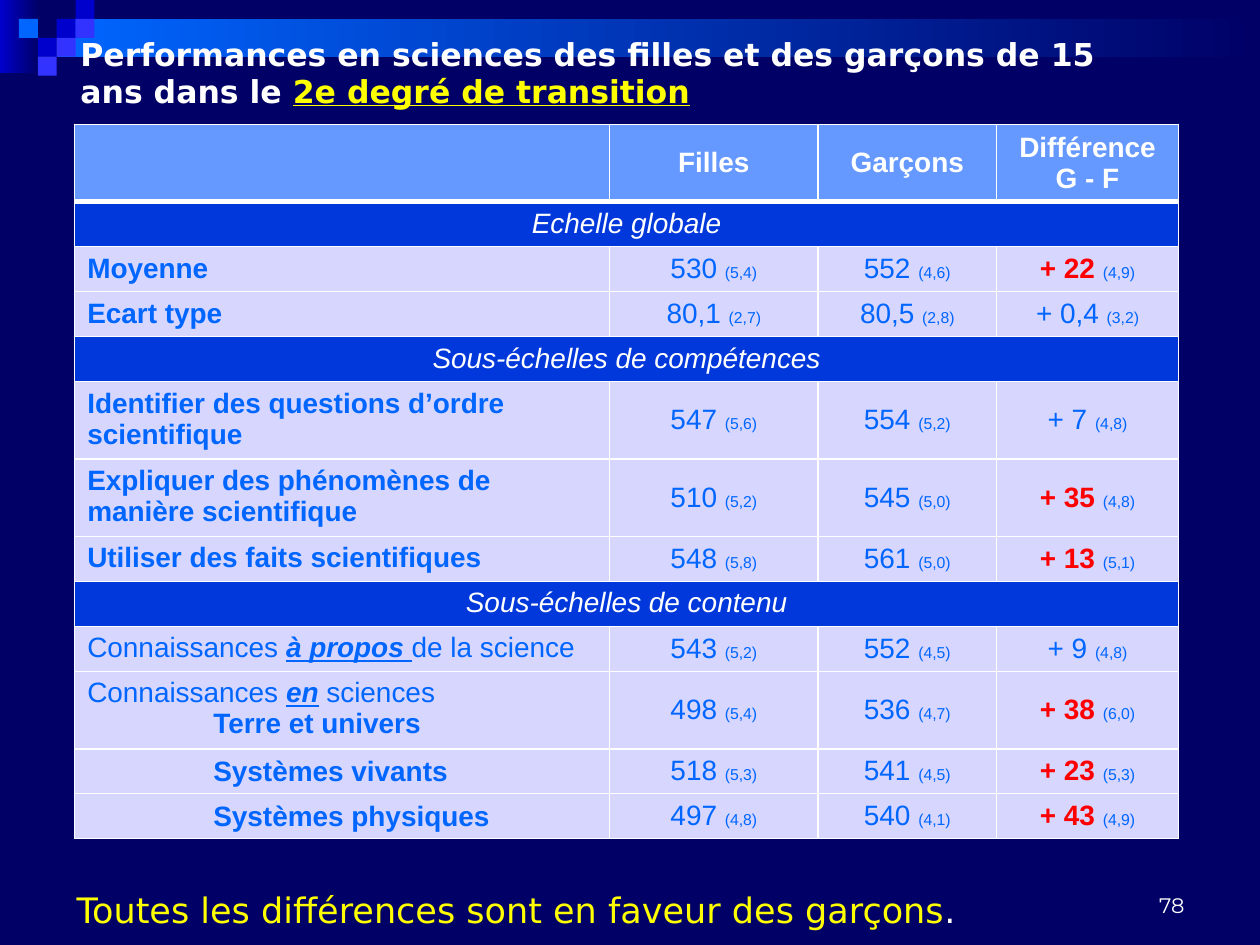
import pptx
import pptx.dml.color
import pptx.enum.shapes
import pptx.enum.text
import pptx.oxml
import pptx.oxml.ns
import pptx.util

Pt = pptx.util.Pt
RGBColor = pptx.dml.color.RGBColor
Align = pptx.enum.text.PP_ALIGN
Anchor = pptx.enum.text.MSO_ANCHOR

NAVY = RGBColor(0x00, 0x00, 0x66)
DARK_BLUE = RGBColor(0x00, 0x00, 0xCC)
VIOLET = RGBColor(0x33, 0x33, 0xFF)
BLUE = RGBColor(0x00, 0x66, 0xFF)
HEADER_BLUE = RGBColor(0x66, 0x99, 0xFF)
SECTION_BLUE = RGBColor(0x00, 0x38, 0xDC)
LILAC = RGBColor(0xD6, 0xD6, 0xFF)
WHITE = RGBColor(0xFF, 0xFF, 0xFF)
YELLOW = RGBColor(0xFF, 0xFF, 0x00)
RED = RGBColor(0xFF, 0x00, 0x00)

TITLE = {"name": "DejaVu Sans", "size": Pt(18), "bold": True, "color": WHITE}
REMARK = {"name": "DejaVu Sans", "size": Pt(20), "color": YELLOW}
NUMBER = {"name": "Montserrat", "size": Pt(12), "color": WHITE}
BODY = {"name": "Arial", "size": Pt(16), "bold": False, "color": BLUE}
LABEL = {**BODY, "bold": True}
HEADER = {**LABEL, "color": WHITE}
SECTION = {**BODY, "italic": True, "color": WHITE}
STRESS = {**LABEL, "italic": True, "underline": True}
UNDERLINED = {**BODY, "underline": True}
SIGNIFICANT = {**LABEL, "color": RED}
ERROR = {**BODY, "size": Pt(9)}

COLUMNS = [305.7, 119.1, 102, 104]
SINGLE, DOUBLE = 25.7, 44.3
INDENT = 72
SQUARE = 10.8
SQUARES = [(3, 1, DARK_BLUE), (4, 0, DARK_BLUE), (4, 1, VIOLET), (2, 2, DARK_BLUE),
           (1, 1, BLUE), (3, 2, VIOLET), (2, 3, VIOLET)]

HEADINGS = ["Filles", "Garçons", "Différence G - F"]
ROWS = [
    (SINGLE, "Echelle globale", []),
    (SINGLE, "Moyenne", ["530 (5,4)", "552 (4,6)", "+ 22 (4,9)"]),
    (SINGLE, "Ecart type", ["80,1 (2,7)", "80,5 (2,8)", "+ 0,4 (3,2)"]),
    (SINGLE, "Sous-échelles de compétences", []),
    (DOUBLE, "Identifier des questions d’ordre scientifique",
     ["547 (5,6)", "554 (5,2)", "+ 7 (4,8)"]),
    (DOUBLE, "Expliquer des phénomènes de manière scientifique",
     ["510 (5,2)", "545 (5,0)", "+ 35 (4,8)"]),
    (SINGLE, "Utiliser des faits scientifiques", ["548 (5,8)", "561 (5,0)", "+ 13 (5,1)"]),
    (SINGLE, "Sous-échelles de contenu", []),
    (SINGLE, [(0, [("Connaissances ", BODY), ("à propos", STRESS), (" ", UNDERLINED),
                   ("de la science", BODY)])],
     ["543 (5,2)", "552 (4,5)", "+ 9 (4,8)"]),
    (DOUBLE, [(0, [("Connaissances ", BODY), ("en", STRESS), (" sciences", BODY)]),
              (INDENT, [("Terre et univers", LABEL)])],
     ["498 (5,4)", "536 (4,7)", "+ 38 (6,0)"]),
    (SINGLE, [(INDENT, [("Systèmes vivants", LABEL)])],
     ["518 (5,3)", "541 (4,5)", "+ 23 (5,3)"]),
    (SINGLE, [(INDENT, [("Systèmes physiques", LABEL)])],
     ["497 (4,8)", "540 (4,1)", "+ 43 (4,9)"]),
]


def plain(text, style):
    return [(0, [(text, style)])]


def decimal(text):
    return float(text.strip("+ ()").replace(",", "."))


def measure(text):
    value, _, error = text.rpartition(" ")
    significant = value.startswith("+") and decimal(value) > 1.96 * decimal(error)
    return [(0, [(value + " ", SIGNIFICANT if significant else BODY), (error, ERROR)])]


class SlideBuilder:
    def __init__(self, page, border_color):
        self.page = page
        self.border_color = border_color

    def fill_text(self, frame, paragraphs, align=Align.LEFT):
        for index, (indent, spans) in enumerate(paragraphs):
            para = frame.add_paragraph() if index else frame.paragraphs[0]
            para.alignment = align
            if indent:
                para._p.get_or_add_pPr().set("marL", str(Pt(indent)))
            for text, style in spans:
                span = para.add_run()
                span.text = text
                for key, value in style.items():
                    if key == "color":
                        span.font.color.rgb = value
                    else:
                        setattr(span.font, key, value)

    def block(self, left, top, width, height, *colors):
        box = self.page.shapes.add_shape(pptx.enum.shapes.MSO_SHAPE.RECTANGLE,
                                         Pt(left), Pt(top), Pt(width), Pt(height))
        box.shadow.inherit = False
        box.line.fill.background()
        if len(colors) == 1:
            box.fill.solid()
            box.fill.fore_color.rgb = colors[0]
            return
        box.fill.gradient()
        box.fill.gradient_angle = 0
        for stop, color in zip(box.fill.gradient_stops, colors):
            stop.color.rgb = color

    def text(self, left, top, width, height, spans, align=Align.LEFT, **layout):
        box = self.page.shapes.add_textbox(Pt(left), Pt(top), Pt(width), Pt(height))
        for key, value in {"word_wrap": True, **layout}.items():
            setattr(box.text_frame, key, value)
        self.fill_text(box.text_frame, [(0, spans)], align)

    def table(self, left, top, widths, heights):
        table = self.page.shapes.add_table(len(heights), len(widths), Pt(left), Pt(top),
                                           Pt(sum(widths)), Pt(sum(heights))).table
        table.first_row = table.horz_banding = False
        for column, width in zip(table.columns, widths):
            column.width = Pt(width)
        for row, height in zip(table.rows, heights):
            row.height = Pt(height)
        return table

    def cell(self, cell, fill, paragraphs, align=Align.CENTER, anchor=Anchor.MIDDLE,
             top_line=1, bottom_line=1):
        cell.fill.solid()
        cell.fill.fore_color.rgb = fill
        cell.vertical_anchor = anchor
        lines = {"lnL": 1, "lnR": 1, "lnT": top_line, "lnB": bottom_line}
        for index, (tag, width) in enumerate(lines.items()):
            cell._tc.get_or_add_tcPr().insert(index, pptx.oxml.parse_xml(
                f'<a:{tag} {pptx.oxml.ns.nsdecls("a")} w="{Pt(width)}"><a:solidFill>'
                f'<a:srgbClr val="{self.border_color}"/></a:solidFill></a:{tag}>'))
        self.fill_text(cell.text_frame, paragraphs, align)


def add_results(builder):
    table = builder.table(42.7, 71, COLUMNS, [DOUBLE] + [row[0] for row in ROWS])
    for column, heading in enumerate([""] + HEADINGS):
        content = plain(heading, HEADER) if heading else []
        builder.cell(table.cell(0, column), HEADER_BLUE, content, bottom_line=3)
    for index, (_, label, values) in enumerate(ROWS, 1):
        top_line = 3 if index == 1 else 1
        first = table.cell(index, 0)
        if not values:
            first.merge(table.cell(index, len(COLUMNS) - 1))
            for column in range(len(COLUMNS)):
                content = [] if column else plain(label, SECTION)
                builder.cell(table.cell(index, column), SECTION_BLUE, content,
                             anchor=Anchor.TOP, top_line=top_line)
            continue
        content = plain(label, LABEL) if isinstance(label, str) else label
        anchor = Anchor.BOTTOM if content[0][0] else Anchor.TOP
        builder.cell(first, LILAC, content, Align.LEFT, anchor)
        for column, value in enumerate(values, 1):
            builder.cell(table.cell(index, column), LILAC, measure(value))


def main():
    deck = pptx.Presentation()
    deck.slide_width, deck.slide_height = Pt(720), Pt(540)
    page = deck.slides.add_slide(deck.slide_layouts[6])
    page.background.fill.solid()
    page.background.fill.fore_color.rgb = NAVY
    builder = SlideBuilder(page, WHITE)

    builder.block(0, 0, 22.3, 41.8, DARK_BLUE, NAVY)
    builder.block(3 * SQUARE, SQUARE, 720 - 3 * SQUARE, 2 * SQUARE, BLUE, NAVY)
    for column, row, color in SQUARES:
        builder.block(column * SQUARE, row * SQUARE, SQUARE, SQUARE, color)

    add_results(builder)
    builder.text(19.4, 7.2, 623.5, 59, [
        ("Performances en sciences des filles et des garçons de 15 ans dans le ", TITLE),
        ("2e degré de transition", {**TITLE, "color": YELLOW, "underline": True}),
    ], vertical_anchor=Anchor.MIDDLE, margin_left=Pt(26.6), margin_top=Pt(12.2),
        margin_bottom=Pt(2.9))
    builder.text(36.7, 504, 522, 31.7, [
        ("Toutes les différences sont en faveur des garçons", REMARK),
        (".", {**REMARK, "color": WHITE}),
    ], word_wrap=False)
    builder.text(516.2, 491.8, 167.8, 36, [("78", NUMBER)], Align.RIGHT,
                 vertical_anchor=Anchor.BOTTOM)
    deck.save("out.pptx")


if __name__ == "__main__":
    main()
